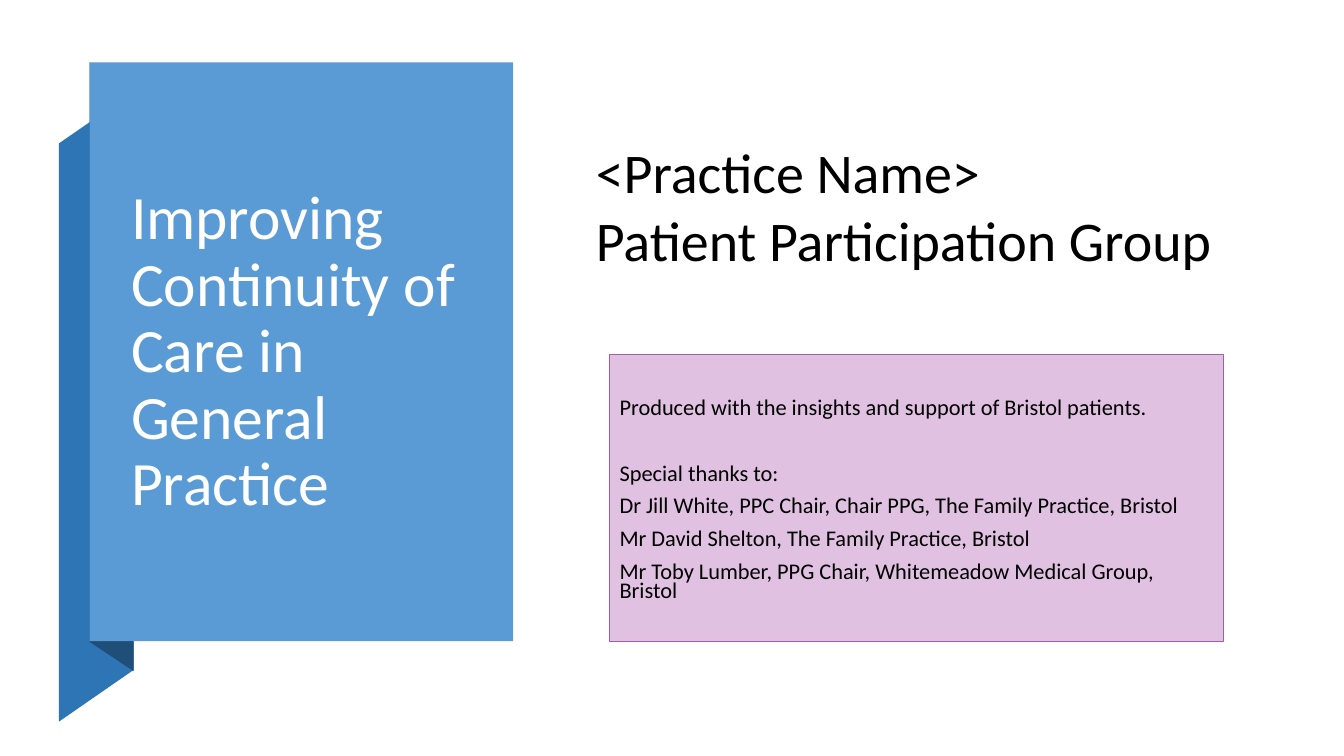
"""Build the title slide for a patient participation group talk."""
import pptx
import pptx.dml.color
import pptx.enum.shapes
import pptx.enum.text
import pptx.util

Pt = pptx.util.Pt
RGBColor = pptx.dml.color.RGBColor
ANCHOR = pptx.enum.text.MSO_ANCHOR
RECTANGLE = pptx.enum.shapes.MSO_SHAPE.RECTANGLE

WHITE = RGBColor(0xFF, 0xFF, 0xFF)
BLACK = RGBColor(0x00, 0x00, 0x00)
PANEL_BLUE = RGBColor(0x5B, 0x9B, 0xD5)
RIBBON_BLUE = RGBColor(0x2E, 0x75, 0xB6)
FOLD_BLUE = RGBColor(0x1F, 0x4E, 0x79)
THANKS_FILL = RGBColor(0xE1, 0xC1, 0xE1)
THANKS_LINE = RGBColor(0xA3, 0x5E, 0xAA)


def write_text(shape, lines, size, color, anchor=ANCHOR.TOP, line_spacing=1.0, gaps=None):
    """Fill a shape with left-aligned paragraphs; gaps are the spaces before each."""
    frame = shape.text_frame
    frame.word_wrap = True
    frame.vertical_anchor = anchor
    for index, line in enumerate(lines):
        paragraph = frame.paragraphs[0] if index == 0 else frame.add_paragraph()
        paragraph.text = line
        paragraph.alignment = pptx.enum.text.PP_ALIGN.LEFT
        paragraph.line_spacing = line_spacing
        paragraph.space_before = Pt(gaps[index] if gaps else 0)
        paragraph.font.name = "Calibri"
        paragraph.font.size = Pt(size)
        paragraph.font.color.rgb = color


presentation = pptx.Presentation()
presentation.slide_width = Pt(960)
presentation.slide_height = Pt(540)
slide = presentation.slides.add_slide(presentation.slide_layouts[6])

ribbon_parts = [
    ([(42, 515.5), (95.5, 478.5), (95.5, 65.5), (42, 102.5)], RIBBON_BLUE),
    ([(64, 458.5), (95.5, 479.5), (95.5, 65), (64, 44.5)], FOLD_BLUE),
]
for points, color in ribbon_parts:
    corners = [(Pt(x), Pt(y)) for x, y in points]
    builder = slide.shapes.build_freeform(*corners[0])
    builder.add_line_segments(corners[1:], close=True)
    ribbon_part = builder.convert_to_shape()
    ribbon_part.shadow.inherit = False
    ribbon_part.fill.solid()
    ribbon_part.fill.fore_color.rgb = color
    ribbon_part.line.fill.background()

panel = slide.shapes.add_shape(RECTANGLE, Pt(64), Pt(44.5), Pt(302.5), Pt(413.5))
panel.shadow.inherit = False
panel.fill.solid()
panel.fill.fore_color.rgb = PANEL_BLUE
panel.line.fill.background()

title = slide.shapes.add_textbox(Pt(86.5), Pt(70), Pt(254), Pt(364))
write_text(title, ["Improving Continuity of Care in General Practice"], 44, WHITE,
           anchor=ANCHOR.MIDDLE, line_spacing=0.9)

thanks = slide.shapes.add_shape(RECTANGLE, Pt(435.5), Pt(253.5), Pt(438.5), Pt(204.5))
thanks.shadow.inherit = False
thanks.fill.solid()
thanks.fill.fore_color.rgb = THANKS_FILL
thanks.line.color.rgb = THANKS_LINE
thanks.line.width = Pt(0.75)
thanks.text_frame.margin_top = Pt(32.5)
thanks_lines = [
    "Produced with the insights and support of Bristol patients.",
    "Special thanks to:",
    "Dr Jill White, PPC Chair, Chair PPG, The Family Practice, Bristol",
    "Mr David Shelton, The Family Practice, Bristol",
    "Mr Toby Lumber, PPG Chair, Whitemeadow Medical Group, Bristol",
]
write_text(thanks, thanks_lines, 16, BLACK, line_spacing=0.7, gaps=[0, 33.5, 10, 10, 10])

practice = slide.shapes.add_textbox(Pt(418.5), Pt(95), Pt(455), Pt(104.5))
write_text(practice, ["<Practice Name>", "Patient Participation Group"], 40, BLACK)

presentation.save("out.pptx")
